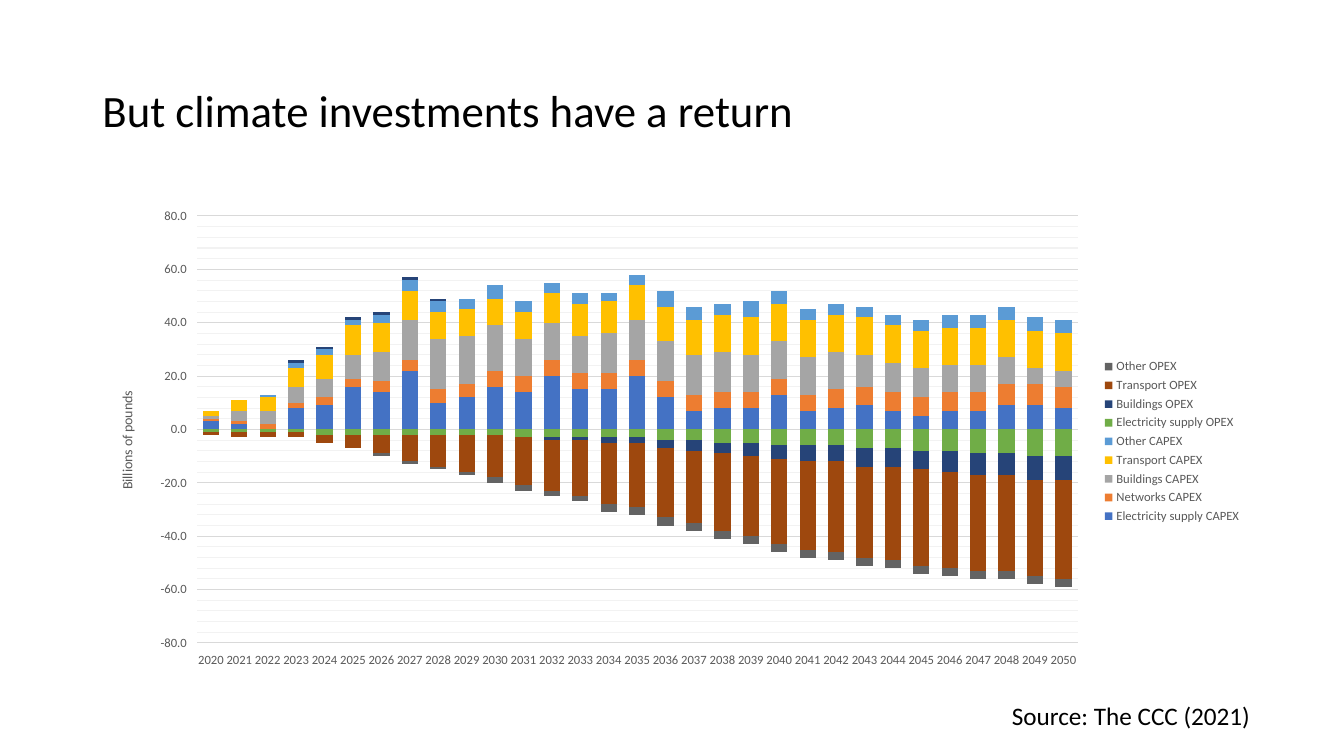
"""Build a slide with a stacked chart of climate investment costs and savings."""
from lxml.etree import SubElement
from pptx import Presentation
from pptx.chart.data import CategoryChartData as ChartData
from pptx.dml.color import RGBColor as Color
from pptx.enum.chart import XL_CHART_TYPE as ChartType
from pptx.enum.chart import XL_LEGEND_POSITION as LegendPosition
from pptx.enum.chart import XL_TICK_LABEL_POSITION as LabelPosition
from pptx.enum.chart import XL_TICK_MARK as TickMark
from pptx.enum.text import MSO_ANCHOR as Anchor
from pptx.enum.text import MSO_AUTO_SIZE as AutoSize
from pptx.enum.text import PP_ALIGN as Align
from pptx.oxml.ns import qn
from pptx.util import Pt

EMU_PER_PX = 9525
FONT = "Calibri"
COLORS = {
    "text": "000000",
    "label": "595959",
    "grid": "D9D9D9",
    "minor grid": "F2F2F2",
    "Electricity supply CAPEX": "4472C4",
    "Networks CAPEX": "ED7D31",
    "Buildings CAPEX": "A5A5A5",
    "Transport CAPEX": "FFC000",
    "Other CAPEX": "5B9BD5",
    "Electricity supply OPEX": "70AD47",
    "Buildings OPEX": "264478",
    "Transport OPEX": "9E480E",
    "Other OPEX": "636363",
}
YEARS = range(2020, 2051)
SUPPLY_CAPEX = [3, 2, 0, 8, 9, 16, 14, 22, 10, 12, 16, 14, 20, 15, 15, 20,
                12, 7, 8, 8, 13, 7, 8, 9, 7, 5, 7, 7, 9, 9, 8]
TURNING_POINTS = {
    "Networks CAPEX": {2020: 1, 2031: 6, 2039: 6, 2050: 8},
    "Buildings CAPEX": {2020: 1, 2021: 4, 2024: 7, 2026: 11, 2028: 19, 2030: 17,
                        2031: 14, 2035: 15, 2042: 14, 2044: 11, 2048: 10,
                        2049: 6, 2050: 6},
    "Transport CAPEX": {2020: 2, 2022: 5, 2025: 11, 2031: 10, 2035: 13,
                        2040: 14, 2050: 14},
    "Other CAPEX": {2020: 0, 2030: 5, 2034: 3, 2036: 6, 2038: 4, 2039: 6,
                    2041: 4, 2050: 5},
    "Electricity supply OPEX": {2020: -1, 2034: -3, 2050: -10},
    "Buildings OPEX": {2020: 0, 2022: 0, 2023: 1, 2028: 1, 2029: 0, 2031: 0,
                       2041: -6, 2050: -9},
    "Transport OPEX": {2020: -1, 2024: -3, 2030: -16, 2036: -26, 2041: -33,
                       2045: -36, 2049: -36, 2050: -37},
    "Other OPEX": {2020: 0, 2024: 0, 2035: -3, 2050: -3},
}


def interpolate(points, year):
    start = max(known for known in points if known <= year)
    end = min(known for known in points if known >= year)
    share = (year - start) / max(end - start, 1)
    return round(points[start] + share * (points[end] - points[start]))


def px(*lengths):
    return [length * EMU_PER_PX for length in lengths]


def color(name):
    return Color.from_string(COLORS[name])


def style_font(font, size, name):
    font.name, font.size, font.bold = FONT, Pt(size), False
    font.color.rgb = color(name)


def style_line(line, name):
    line.width = Pt(0.75)
    line.color.rgb = color(name)


def write(frame, text, size=18, name="text", align=Align.LEFT, spacing=1.0):
    paragraph = frame.paragraphs[0]
    paragraph.alignment, paragraph.line_spacing = align, spacing
    run = paragraph.add_run()
    run.text = text
    style_font(run.font, size, name)


def set_layout(element, **fractions):
    layout = element.find(qn("c:layout"))
    if layout is None:
        layout = SubElement(element, qn("c:layout"))
        element.insert(0, layout)
    manual = SubElement(layout, qn("c:manualLayout"))
    if "w" in fractions:
        SubElement(manual, qn("c:layoutTarget")).set("val", "inner")
    for side in "xy":
        SubElement(manual, qn(f"c:{side}Mode")).set("val", "edge")
    for key, fraction in fractions.items():
        SubElement(manual, qn(f"c:{key}")).set("val", str(fraction))


class SlideBuilder:
    def __init__(self, slide):
        self.slide = slide

    def title(self, text, box):
        shape = self.slide.shapes.title
        shape.left, shape.top, shape.width, shape.height = px(*box)
        frame = shape.text_frame
        frame.auto_size, frame.vertical_anchor = AutoSize.NONE, Anchor.MIDDLE
        write(frame, text, size=32, spacing=0.9)

    def text(self, text, box, **style):
        frame = self.slide.shapes.add_textbox(*px(*box)).text_frame
        frame.word_wrap, frame.auto_size = True, AutoSize.SHAPE_TO_FIT_TEXT
        write(frame, text, **style)

    def stacked_chart(self, categories, rows, axis_title, box):
        data = ChartData(number_format="0.0")
        data.categories = categories
        for name, values in rows.items():
            data.add_series(name, values)
        chart = self.slide.shapes.add_chart(
            ChartType.COLUMN_STACKED, *px(*box), data).chart
        style_font(chart.font, 10, "text")
        chart.has_title = False
        plot = chart.plots[0]
        plot.gap_width, plot.overlap, plot.vary_by_categories = 75, 100, False
        for series in plot.series:
            series.invert_if_negative = False
            series.format.fill.solid()
            series.format.fill.fore_color.rgb = color(series.name)
        self.category_axis(chart.category_axis)
        self.value_axis(chart.value_axis, axis_title)
        chart.has_legend = True
        chart.legend.position = LegendPosition.RIGHT
        chart.legend.include_in_layout = False
        style_font(chart.legend.font, 9, "label")
        set_layout(plot._element.getparent(), x=0.09, y=0.03, w=0.76, h=0.89)

    def category_axis(self, axis):
        axis.tick_label_position = LabelPosition.LOW
        axis.major_tick_mark = axis.minor_tick_mark = TickMark.NONE
        style_font(axis.tick_labels.font, 9, "label")
        style_line(axis.format.line, "grid")

    def value_axis(self, axis, title):
        axis.minimum_scale, axis.maximum_scale = -80, 80
        axis.major_unit, axis.minor_unit = 20, 4
        axis.major_tick_mark, axis.minor_tick_mark = TickMark.OUTSIDE, TickMark.NONE
        axis.has_major_gridlines = axis.has_minor_gridlines = True
        style_line(axis.major_gridlines.format.line, "grid")
        minor_gridlines = axis.minor_gridlines if hasattr(axis, "minor_gridlines") else None
        if minor_gridlines is None:
            grid = axis._element.find(qn("c:minorGridlines"))
            properties = SubElement(grid, qn("c:spPr"))
            line = SubElement(properties, qn("a:ln"), w=str(Pt(0.75)))
            fill = SubElement(line, qn("a:solidFill"))
            SubElement(fill, qn("a:srgbClr"), val=COLORS["minor grid"])
        axis.format.line.fill.background()
        style_font(axis.tick_labels.font, 9, "label")
        axis.tick_labels.number_format = "0.0"
        axis.tick_labels.number_format_is_linked = False
        frame = axis.axis_title.text_frame
        write(frame, title, size=10, name="label", align=Align.CENTER)
        body = frame._txBody.find(qn("a:bodyPr"))
        body.set("rot", "-5400000")
        body.set("vert", "horz")
        set_layout(axis.axis_title._element.find(qn("c:layout")).getparent(),
                   x=0.02, y=0.39)


def main():
    presentation = Presentation()
    presentation.slide_width, presentation.slide_height = px(1280, 720)
    slide = presentation.slides.add_slide(presentation.slide_layouts[5])
    builder = SlideBuilder(slide)
    builder.title("But climate investments have a return", (88, 38, 1104, 139))
    rows = {"Electricity supply CAPEX": SUPPLY_CAPEX}
    for name, points in TURNING_POINTS.items():
        rows[name] = [interpolate(points, year) for year in YEARS]
    builder.stacked_chart([str(year) for year in YEARS], rows,
                          "Billions of pounds", (88, 192, 1104, 457))
    builder.text("Source: The CCC (2021)", (924, 662, 276, 38), align=Align.RIGHT)
    presentation.save("out.pptx")


if __name__ == "__main__":
    main()
